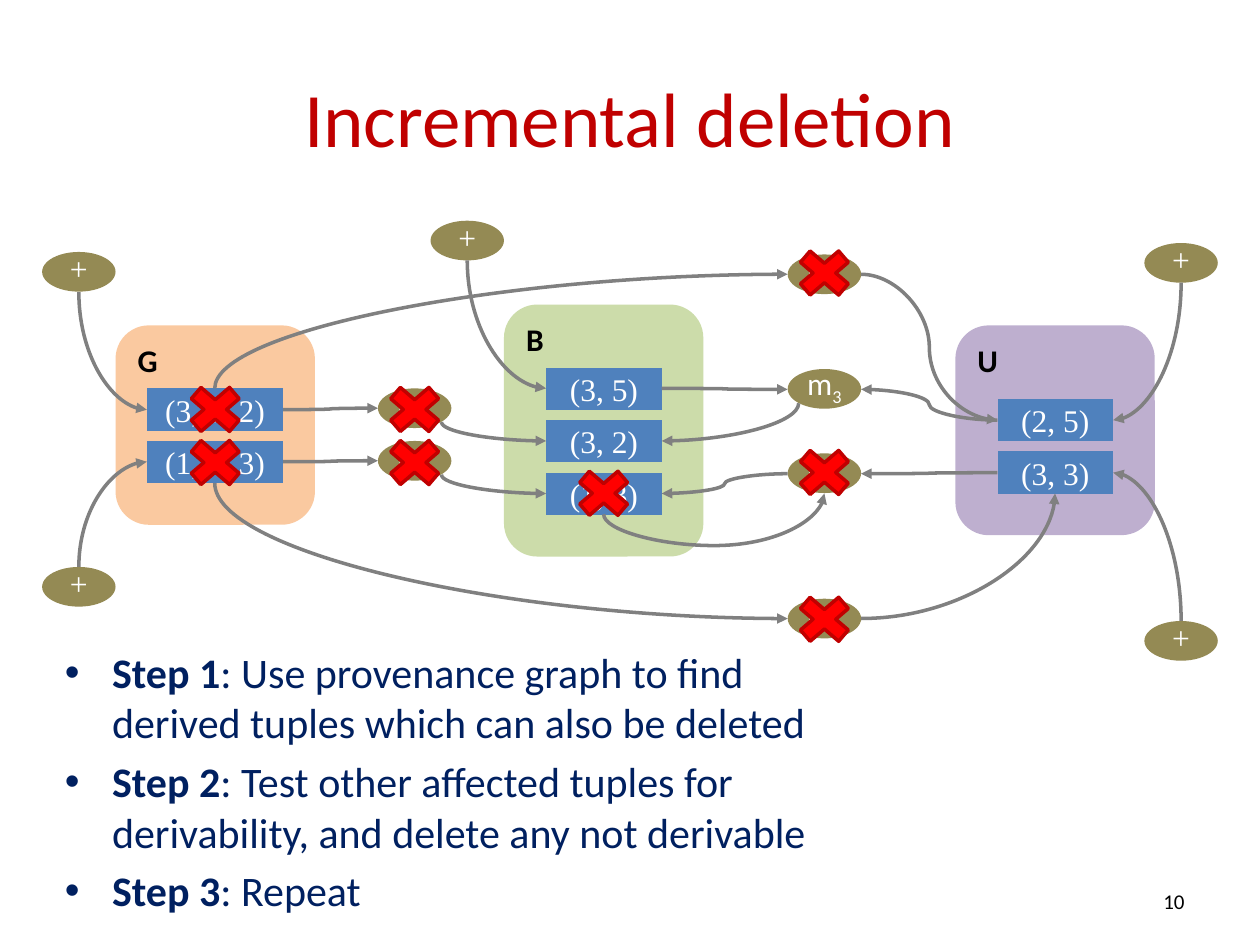
from lxml import etree
from pptx import Presentation
from pptx.dml.color import RGBColor
from pptx.enum.shapes import MSO_CONNECTOR, MSO_SHAPE
from pptx.enum.text import MSO_ANCHOR, PP_ALIGN
from pptx.oxml.ns import qn
from pptx.util import Cm, Pt

CURVE = MSO_CONNECTOR.CURVE
ZONE, TUPLE, OVAL, CROSS = (MSO_SHAPE.ROUNDED_RECTANGLE, MSO_SHAPE.FLOWCHART_PROCESS,
                            MSO_SHAPE.OVAL, MSO_SHAPE.MATH_MULTIPLY)
TOP, MIDDLE = MSO_ANCHOR.TOP, MSO_ANCHOR.MIDDLE
LEFT, CENTER, RIGHT = PP_ALIGN.LEFT, PP_ALIGN.CENTER, PP_ALIGN.RIGHT

COLORS = {
    "title": "C00000", "body": "002060", "black": "000000", "white": "FFFFFF",
    "G": "F79646", "B": "9BBB59", "U": "8064A2", "tuple": "4F81BD",
    "oval": "948A54", "arrow": "808080", "cross": "FF0000", "cross edge": "C00000",
}
COLORS = {name: RGBColor.from_string(code) for name, code in COLORS.items()}

deck = Presentation()
deck.slide_width, deck.slide_height = Cm(25.4), Cm(19.05)
page = deck.slides.add_slide(deck.slide_layouts[6])


def write(para, text, size, color, align=LEFT, **formats):
    """Add a span of text to a paragraph and return it."""
    para.alignment = align
    span = para.add_run()
    span.text = text
    formats = {"name": "Calibri", "size": Pt(size), "bold": False} | formats
    for name, value in formats.items():
        setattr(span.font, name, value)
    span.font.color.rgb = COLORS[color]
    return span


def link(start, end, vertical, bends, bend_at=None):
    """Draw a curved arrow that leaves its start vertically or horizontally."""
    (x1, y1), (x2, y2) = start, end
    if vertical:  # a quarter turn about the middle swaps width and height
        middle_x, middle_y = (x1 + x2) / 2, (y1 + y2) / 2
        turn = 1 if (x2 - x1) * (y2 - y1) > 0 else -1
        half_x, half_y = turn * (y2 - y1) / 2, turn * (x2 - x1) / 2
        x1, y1, x2, y2 = (middle_x + half_x, middle_y - half_y,
                          middle_x - half_x, middle_y + half_y)
    arrow = page.shapes.add_connector(CURVE, Cm(x1), Cm(y1), Cm(x2), Cm(y2))
    arrow.line.color.rgb = COLORS["arrow"]
    arrow.line.width = Pt(2)
    properties = arrow._element.spPr
    if vertical:
        properties.find(qn("a:xfrm")).set("rot", "16200000" if turn > 0 else "5400000")
    geometry = properties.find(qn("a:prstGeom"))
    geometry.set("prst", f"curvedConnector{bends}")
    if bend_at is not None:
        etree.SubElement(geometry.find(qn("a:avLst")), qn("a:gd"),
                         name="adj1", fmla=f"val {bend_at}")
    etree.SubElement(properties.find(qn("a:ln")), qn("a:tailEnd"), type="triangle")
    etree.SubElement(properties, qn("a:effectLst"))


# Title, step list and page number boxes
frames = {}
for name, place, anchor in [
    ("title", (1.27, 0.76, 22.86, 3.18), MIDDLE),
    ("steps", (1.06, 12.91, 16.93, 5.93), TOP),
    ("number", (18.2, 17.65, 5.93, 1.02), MIDDLE),
]:
    box = page.shapes.add_textbox(*map(Cm, place))
    frames[name] = box.text_frame
    frames[name].word_wrap = True
    frames[name].vertical_anchor = anchor
write(frames["title"].paragraphs[0], "Incremental deletion", 44, "title", CENTER)
write(frames["number"].paragraphs[0], "10", 12, "black", RIGHT)

steps = [
    ("Step 1", ": Use provenance graph to find derived tuples which can also be deleted"),
    ("Step 2", ": Test other affected tuples for derivability, and delete any not derivable"),
    ("Step 3", ": Repeat"),
]
for index, (head, rest) in enumerate(steps):
    para = frames["steps"].paragraphs[0] if index == 0 else frames["steps"].add_paragraph()
    write(para, head, 24, "body", bold=True)
    write(para, rest, 24, "body")
    para.space_before = Pt(4.8)
    indent = para._p.get_or_add_pPr()
    indent.set("marL", str(Cm(0.95)))
    indent.set("indent", str(-Cm(0.95)))
    etree.SubElement(indent, qn("a:buFont"), typeface="Arial")
    etree.SubElement(indent, qn("a:buChar"), char="•")

# Relations: zone place, then left, top and width of the column of tuples
relations = [
    ("G", (2.33, 6.56, 4.02, 4.02), (2.96, 7.83, 2.75), ["(3, 5, 2)", "(1, 3, 3)"]),
    ("B", (10.16, 6.14, 4.02, 5.08), (11.01, 7.41, 2.33), ["(3, 5)", "(3, 2)", "(1, 3)"]),
    ("U", (19.26, 6.56, 4.02, 4.23), (20.11, 8.04, 2.33), ["(2, 5)", "(3, 3)"]),
]
ROW_HEIGHT, ROW_STEP = 0.85, 1.06
for name, place, (left, top, width), tuples in relations:
    zone = page.shapes.add_shape(ZONE, *map(Cm, place))
    zone.shadow.inherit = False
    zone.fill.solid()
    zone.fill.fore_color.rgb = COLORS[name]
    etree.SubElement(zone._element.spPr.find(".//" + qn("a:srgbClr")),
                     qn("a:alpha"), val="51000")
    zone.line.fill.background()
    zone.text_frame.vertical_anchor = TOP
    write(zone.text_frame.paragraphs[0], name, 18, "black", bold=True)
    for row, text in enumerate(tuples):
        box = page.shapes.add_shape(TUPLE, Cm(left), Cm(top + row * ROW_STEP),
                                    Cm(width), Cm(ROW_HEIGHT))
        box.shadow.inherit = False
        box.fill.solid()
        box.fill.fore_color.rgb = COLORS["tuple"]
        box.line.fill.background()
        box.text_frame.word_wrap = True
        box.text_frame.vertical_anchor = MIDDLE
        write(box.text_frame.paragraphs[0], text, 18, "white", CENTER, name="Times New Roman")

# Insertions (+) and mappings (m with its number)
ovals = [
    ("+", 8.68, 4.45), ("+", 23.07, 4.9), ("+", 0.85, 5.08), ("+", 0.85, 11.43),
    ("+", 23.07, 12.52), ("1", 7.62, 7.83), ("1", 7.62, 8.89), ("2", 15.88, 5.13),
    ("2", 15.88, 12.07), ("3", 15.88, 7.44), ("3", 15.88, 9.14),
]
for label, left, top in ovals:
    oval = page.shapes.add_shape(OVAL, Cm(left), Cm(top), Cm(1.48), Cm(0.8))
    oval.shadow.inherit = False
    oval.fill.solid()
    oval.fill.fore_color.rgb = COLORS["oval"]
    oval.line.fill.background()
    layout = {"word_wrap": False, "vertical_anchor": MIDDLE, "margin_left": 0,
              "margin_right": 0, "margin_top": 0, "margin_bottom": Cm(0.15)}
    for name, value in layout.items():
        setattr(oval.text_frame, name, value)
    para = oval.text_frame.paragraphs[0]
    if label == "+":
        write(para, label, 18, "white", CENTER, name="Times New Roman")
    else:
        write(para, "m", 18, "white", CENTER)
        number = write(para, label, 18, "white", CENTER)
        number._r.get_or_add_rPr().set("baseline", "-25000")

# Arrows that leave vertically and bend once
for start, end in [
    ((1.59, 5.89), (2.96, 8.26)), ((1.59, 11.43), (2.96, 9.31)),
    ((9.42, 5.25), (11.01, 7.83)), ((23.81, 5.7), (22.44, 8.47)),
    ((8.9, 8.51), (11.01, 8.89)), ((8.9, 9.57), (11.01, 9.95)),
    ((4.33, 7.83), (15.88, 5.53)), ((16.1, 8.13), (13.34, 8.89)),
    ((4.33, 9.74), (15.88, 12.47)), ((23.81, 12.52), (22.44, 9.53)),
]:
    link(start, end, vertical=True, bends=2)

# Arrows that leave and arrive horizontally
for start, end in [
    ((5.71, 8.26), (7.62, 8.23)), ((5.71, 9.31), (7.62, 9.29)),
    ((17.36, 5.53), (20.11, 8.47)), ((13.34, 7.83), (15.88, 7.85)),
    ((20.11, 8.47), (17.36, 7.85)), ((20.11, 9.53), (17.36, 9.55)),
    ((15.88, 9.55), (13.34, 9.95)),
]:
    link(start, end, vertical=False, bends=3)

link((17.36, 12.47), (21.27, 9.95), vertical=False, bends=2)
link((12.17, 10.37), (16.62, 9.95), vertical=True, bends=3, bend_at=-150000)

# Crosses over whatever is deleted
for left, top in [
    (3.6, 7.62), (3.6, 8.69), (7.62, 7.62), (7.62, 8.69),
    (11.43, 9.31), (15.88, 4.87), (15.88, 8.89), (15.88, 11.85),
]:
    cross = page.shapes.add_shape(CROSS, Cm(left), Cm(top), Cm(1.48), Cm(1.27))
    cross.shadow.inherit = False
    cross.fill.solid()
    cross.fill.fore_color.rgb = COLORS["cross"]
    cross.line.color.rgb = COLORS["cross edge"]
    cross.line.width = Pt(2)

deck.save("out.pptx")
